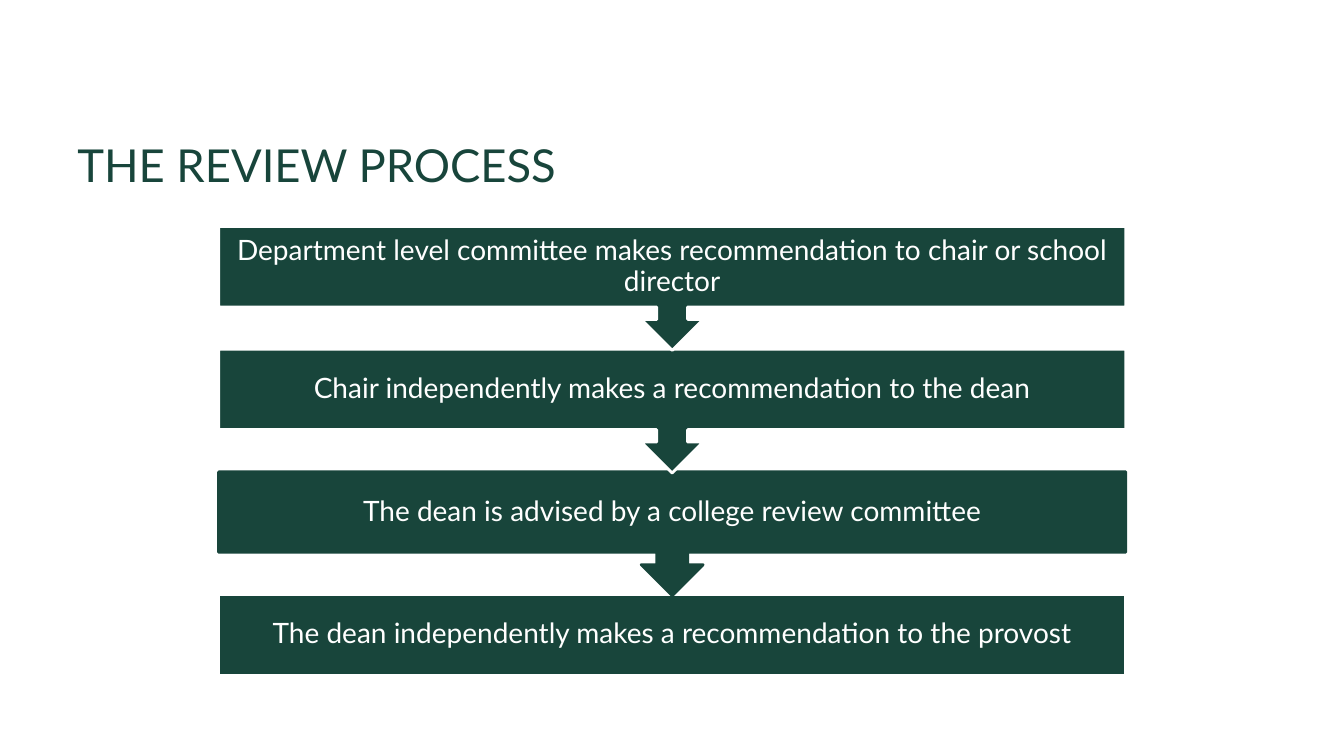
import pptx
import pptx.util
import pptx.dml.color
import pptx.enum.shapes
import pptx.enum.text
from dataclasses import dataclass

Cm = pptx.util.Cm
Pt = pptx.util.Pt
Align = pptx.enum.text.PP_ALIGN
Shape = pptx.enum.shapes.MSO_SHAPE

TITLE = "THE REVIEW PROCESS"
STEPS = [
    ("Department level committee makes recommendation to chair or school director", "white"),
    ("Chair independently makes a recommendation to the dean", "white"),
    ("The dean is advised by a college review committee", "green"),
    ("The dean independently makes a recommendation to the provost", "white"),
]


@dataclass
class Theme:
    green: str = "18453B"
    white: str = "FFFFFF"
    font: str = "Lato"
    title_size: float = 32.4
    step_size: float = 20
    outline: float = 2


theme = Theme()


def color(name):
    return pptx.dml.color.RGBColor.from_string(getattr(theme, name))


def write(box, text, *, size, ink, align, inset_x, inset_y, spacing=1.0):
    frame = box.text_frame
    frame.word_wrap = True
    frame.vertical_anchor = pptx.enum.text.MSO_ANCHOR.MIDDLE
    frame.margin_left = frame.margin_right = Cm(inset_x)
    frame.margin_top = frame.margin_bottom = Cm(inset_y)
    para = frame.paragraphs[0]
    para.alignment = align
    para.line_spacing = spacing
    span = para.add_run()
    span.text = text
    span.font.name = theme.font
    span.font.size = Pt(size)
    span.font.color.rgb = color(ink)


def add_step(page, index, text, outline):
    left, top, width, pitch = 5.51, 5.71, 22.86, 3.09
    is_last = index == len(STEPS) - 1
    kind, height = (Shape.RECTANGLE, 2.03) if is_last else (Shape.DOWN_ARROW_CALLOUT, 3.12)
    box = page.shapes.add_shape(
        kind, Cm(left), Cm(top + index * pitch), Cm(width), Cm(height))
    box.shadow.inherit = False
    box.fill.solid()
    box.fill.fore_color.rgb = color("green")
    box.line.color.rgb = color(outline)
    box.line.width = Pt(theme.outline)
    write(box, text, size=theme.step_size, ink="white", align=Align.CENTER,
          inset_x=0.41, inset_y=0.41, spacing=0.9)


def main():
    deck = pptx.Presentation()
    deck.slide_width, deck.slide_height = Cm(33.87), Cm(19.05)
    page = deck.slides.add_slide(deck.slide_layouts[6])
    title = page.shapes.add_textbox(Cm(1.7), Cm(3.48), Cm(30.48), Cm(1.35))
    write(title, TITLE, size=theme.title_size, ink="green", align=Align.LEFT,
          inset_x=0.25, inset_y=0.13)
    for index, (text, outline) in reversed(list(enumerate(STEPS))):
        add_step(page, index, text, outline)
    deck.save("out.pptx")


if __name__ == "__main__":
    main()
